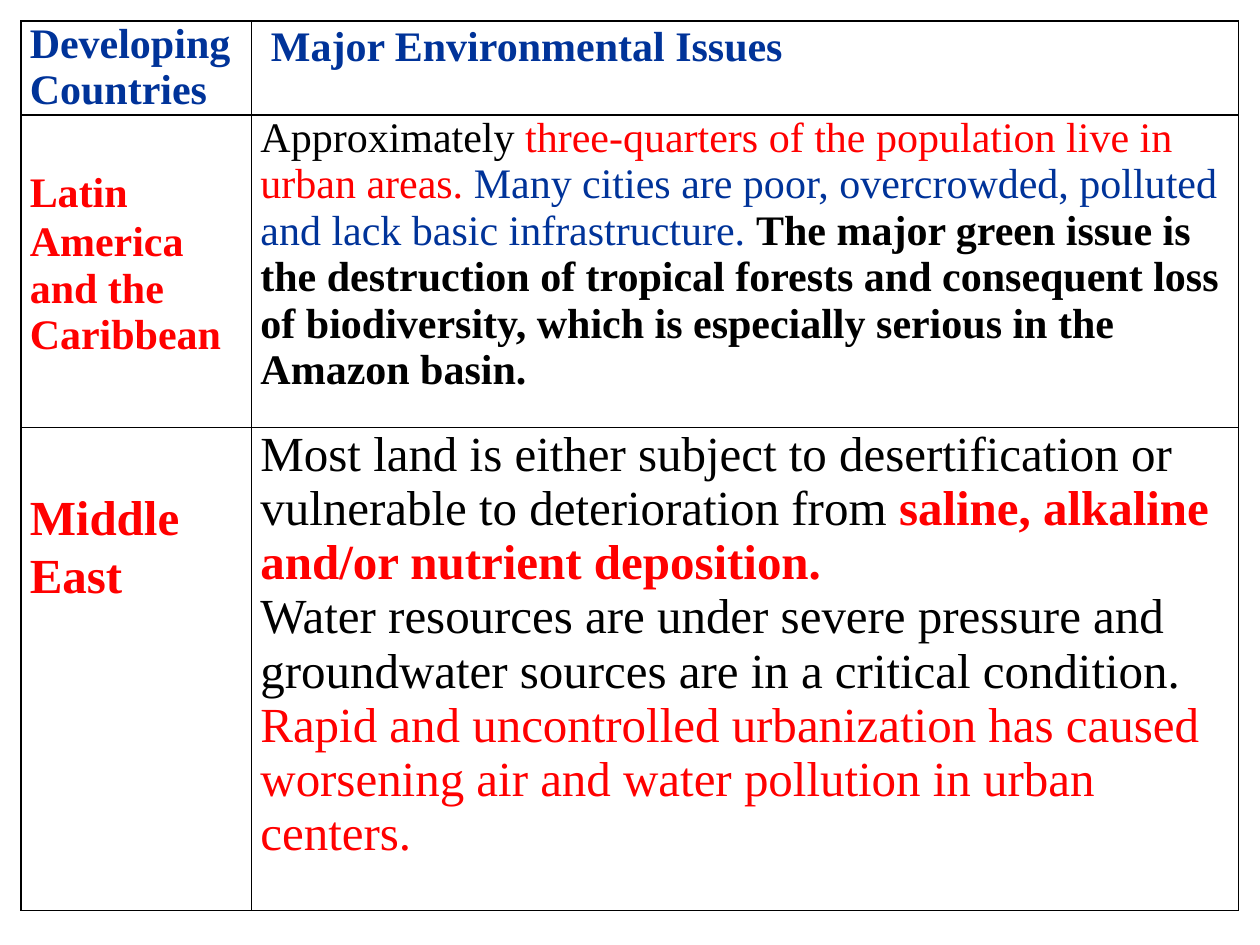
from dataclasses import dataclass

from lxml import etree
from pptx import Presentation
from pptx.dml.color import RGBColor
from pptx.oxml import ns
from pptx.util import Cm, Inches, Pt

COLORS = {"blue": "003399", "red": "FF0000", "black": "000000"}
FONT = "Times New Roman"
COLUMN_WIDTHS = (4.65, 19.9)
ROW_HEIGHTS = (1.9, 6.3, 9.73)
LEFT = TOP = 0.42


@dataclass
class Run:
    text: str
    color: str
    bold: bool = False


@dataclass
class Para:
    runs: list[Run]
    spacing: float = 1.0


@dataclass
class CellText:
    paras: list[Para]
    size: int = 24
    top: float = 0.0


ROWS = [
    [
        CellText([Para([Run("Developing Countries", "blue", True)])]),
        CellText([Para([Run(" Major Environmental Issues", "blue", True)], 1.07)]),
    ],
    [
        CellText([
            Para([Run("Latin America", "red", True)], 1.07),
            Para([Run("and the", "red", True)]),
            Para([Run("Caribbean", "red", True)]),
        ], top=1.04),
        CellText([Para([
            Run("Approximately ", "black"),
            Run("three-quarters of the population live in urban areas. ", "red"),
            Run("Many cities are poor, overcrowded, polluted and lack basic "
                "infrastructure. ", "blue"),
            Run("The major green issue is the destruction of tropical forests and "
                "consequent loss of biodiversity, which is especially serious in "
                "the Amazon basin.", "black", True),
        ])]),
    ],
    [
        CellText([Para([Run("Middle East", "red", True)], 1.07)], size=28, top=1.21),
        CellText([
            Para([
                Run("Most land is either subject to desertification or vulnerable "
                    "to deterioration from ", "black"),
                Run("saline, alkaline and/or nutrient deposition.", "red", True),
            ]),
            Para([
                Run("Water resources are under severe pressure and groundwater "
                    "sources are in a critical condition. ", "black"),
                Run("Rapid and uncontrolled urbanization has caused worsening air "
                    "and water pollution in urban centers.", "red"),
            ]),
        ], size=28),
    ],
]


def add_borders(cell, width: float = 1) -> None:
    tc_pr = cell._tc.get_or_add_tcPr()
    for side in "LRTB":
        ln = etree.SubElement(tc_pr, ns.qn(f"a:ln{side}"), w=str(Pt(width)))
        fill = etree.SubElement(ln, ns.qn("a:solidFill"))
        etree.SubElement(fill, ns.qn("a:srgbClr"), val=COLORS["black"])


def fill_cell(cell, content: CellText) -> None:
    margins = {"margin_left": 0.18, "margin_right": 0.18,
               "margin_top": content.top, "margin_bottom": 0}
    for name, value in margins.items():
        setattr(cell, name, Cm(value))
    add_borders(cell)
    cell.fill.background()
    tf = cell.text_frame
    for i, para in enumerate(content.paras):
        p = tf.paragraphs[0] if i == 0 else tf.add_paragraph()
        p.line_spacing = para.spacing
        for run in para.runs:
            r = p.add_run()
            r.text = run.text
            font = {"name": FONT, "size": Pt(content.size), "bold": run.bold}
            for name, value in font.items():
                setattr(r.font, name, value)
            r.font.color.rgb = RGBColor.from_string(COLORS[run.color])


def main() -> None:
    prs = Presentation()
    prs.slide_width, prs.slide_height = Inches(10), Inches(7.5)
    s = prs.slides.add_slide(prs.slide_layouts[6])
    table = s.shapes.add_table(
        len(ROW_HEIGHTS), len(COLUMN_WIDTHS), Cm(LEFT), Cm(TOP),
        Cm(sum(COLUMN_WIDTHS)), Cm(sum(ROW_HEIGHTS))).table
    table.first_row = table.horz_banding = False
    for column, width in zip(table.columns, COLUMN_WIDTHS):
        column.width = Cm(width)
    for row, height, contents in zip(table.rows, ROW_HEIGHTS, ROWS):
        row.height = Cm(height)
        for cell, content in zip(row.cells, contents):
            fill_cell(cell, content)
    prs.save("out.pptx")


if __name__ == "__main__":
    main()
